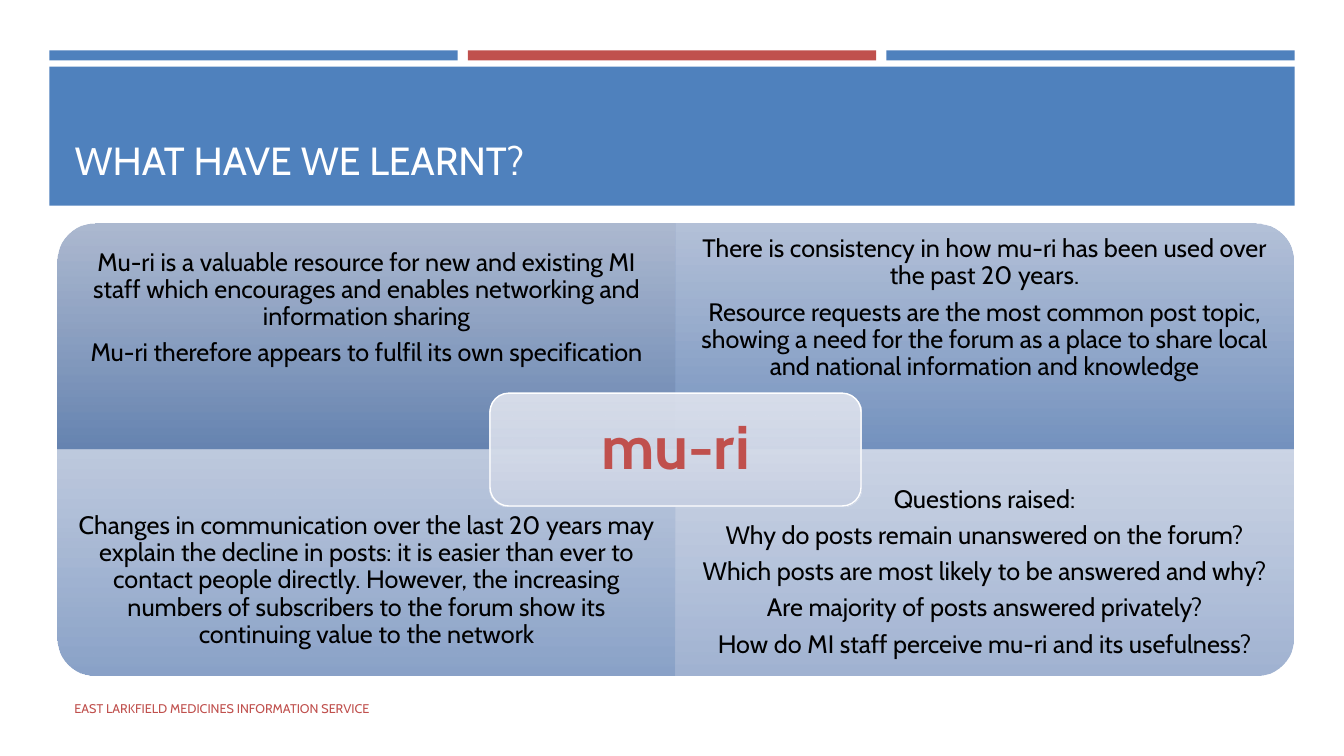
from lxml import etree
from pptx import Presentation
from pptx.dml.color import RGBColor
from pptx.enum.shapes import MSO_SHAPE
from pptx.enum.text import MSO_ANCHOR, MSO_AUTO_SIZE, PP_ALIGN
from pptx.oxml.ns import qn
from pptx.util import Pt

RECT, ROUNDED = MSO_SHAPE.RECTANGLE, MSO_SHAPE.ROUNDED_RECTANGLE
ONE_ROUND = MSO_SHAPE.ROUND_1_RECTANGLE
MIDDLE, BOTTOM = MSO_ANCHOR.MIDDLE, MSO_ANCHOR.BOTTOM
LEFT, CENTER = PP_ALIGN.LEFT, PP_ALIGN.CENTER

PX = 9144
THEME = {
    "font": "Cabin",
    "blue": "4F81BD", "red": "C0504D", "white": "FFFFFF", "black": "000000",
    "title": 28, "body": 18, "hub": 44, "footer": 9,
    "hub_fade": ("E1E5EF", "C7D0E3"),
}


def write(holder, lines, size, color, align, anchor, margins, bold=False):
    frame = holder.text_frame
    left, top, right, bottom = (value * PX for value in margins)
    frame_format = {
        "word_wrap": True, "auto_size": MSO_AUTO_SIZE.NONE, "vertical_anchor": anchor,
        "margin_left": left, "margin_top": top,
        "margin_right": right, "margin_bottom": bottom,
    }
    for name, value in frame_format.items():
        setattr(frame, name, value)
    frame.text = "\n".join(lines)
    paragraph_format = {"alignment": align, "line_spacing": 0.9,
                        "space_before": Pt(0), "space_after": Pt(6.4)}
    font_format = {"name": THEME["font"], "size": Pt(THEME[size]), "bold": bold}
    for paragraph in frame.paragraphs:
        for name, value in paragraph_format.items():
            setattr(paragraph, name, value)
        font = paragraph.runs[0].font
        for name, value in font_format.items():
            setattr(font, name, value)
        font.color.rgb = RGBColor.from_string(THEME[color])


def fade(shape, colors):
    shape.shadow.inherit = False
    shape.line.fill.background()
    shape.fill.gradient()
    shape.fill.gradient_angle = 270
    for stop, color in zip(shape.fill.gradient_stops, colors):
        stop.color.rgb = RGBColor.from_string(color)
    gradient = shape._element.spPr.find(qn("a:gradFill"))
    gradient.set("rotWithShape", "0")
    first_color = gradient.find(".//" + qn("a:srgbClr"))
    etree.SubElement(first_color, qn("a:alpha")).set("val", "90000")


deck = Presentation()
deck.slide_width, deck.slide_height = 1333 * PX, 750 * PX
slide = deck.slides.add_slide(deck.slide_layouts[5])
shapes = slide.shapes

header_blocks = [
    (49, 50, 405, 10, "blue"),
    (464, 50, 405, 10, "red"),
    (879, 50, 405, 10, "blue"),
    (49, 66, 1235, 138, "blue"),
]
for *box, color in header_blocks:
    block = shapes.add_shape(RECT, *(value * PX for value in box))
    block.shadow.inherit = False
    block.fill.solid()
    block.fill.fore_color.rgb = RGBColor.from_string(THEME[color])
    block.line.fill.background()

title = shapes.title
title_box = {"left": 64, "top": 80, "width": 1206, "height": 108}
for name, value in title_box.items():
    setattr(title, name, value * PX)
write(title, ["WHAT HAVE WE LEARNT?"], "title", "white", LEFT, BOTTOM, (10, 5, 10, 5))
shapes._spTree.append(title._element)

footer = shapes.add_textbox(64 * PX, 684 * PX, 756 * PX, 40 * PX)
write(footer, ["EAST LARKFIELD MEDICINES INFORMATION SERVICE"],
      "footer", "red", LEFT, MIDDLE, (10, 5, 10, 5))

GRID_LEFT, GRID_TOP, PANEL_W, PANEL_H, TEXT_H = 57, 222, 613, 224, 168
panels = [
    (270, ("A3B1CB", "6684B1"), 14, [
        "Mu-ri is a valuable resource for new and existing MI staff which encourages "
        "and enables networking and information sharing",
        "Mu-ri therefore appears to fulfil its own specification",
    ]),
    (0, ("ABBAD4", "7492BF"), 14, [
        "There is consistency in how mu-ri has been used over the past 20 years.",
        "Resource requests are the most common post topic, showing a need for the forum "
        "as a place to share local and national information and knowledge",
    ]),
    (180, ("B7C4DB", "8AA2C8"), 34, [
        "Changes in communication over the last 20 years may explain the decline in "
        "posts: it is easier than ever to contact people directly. However, the "
        "increasing numbers of subscribers to the forum show its continuing value "
        "to the network",
    ]),
    (90, ("C6D0E3", "A1B3D2"), 50, [
        "Questions raised:",
        "Why do posts remain unanswered on the forum?",
        "Which posts are most likely to be answered and why?",
        "Are majority of posts answered privately?",
        "How do MI staff perceive mu-ri and its usefulness?",
    ]),
]
for index, (rotation, colors, bottom_margin, lines) in enumerate(panels):
    row, column = divmod(index, 2)
    left = GRID_LEFT + column * PANEL_W
    top = GRID_TOP + row * PANEL_H
    turn = (PANEL_W - PANEL_H) * PX // 2 if rotation % 180 else 0
    width, height = (PANEL_H, PANEL_W) if turn else (PANEL_W, PANEL_H)
    panel = shapes.add_shape(ONE_ROUND, left * PX + turn, top * PX - turn,
                             width * PX, height * PX)
    panel.rotation = rotation
    fade(panel, colors)
    text_top = top + row * (PANEL_H - TEXT_H)
    finding = shapes.add_textbox(left * PX, text_top * PX, PANEL_W * PX, TEXT_H * PX)
    write(finding, lines, "body", "black", CENTER, MIDDLE, (14, 14, 14, bottom_margin))

hub = shapes.add_shape(ROUNDED, 486 * PX, 390 * PX, 368 * PX, 112 * PX)
fade(hub, THEME["hub_fade"])
hub.line.color.rgb = RGBColor.from_string(THEME["white"])
hub.line.width = Pt(1)
write(hub, ["mu-ri"], "hub", "red", CENTER, MIDDLE, (18, 18, 18, 18), bold=True)

deck.save("out.pptx")
